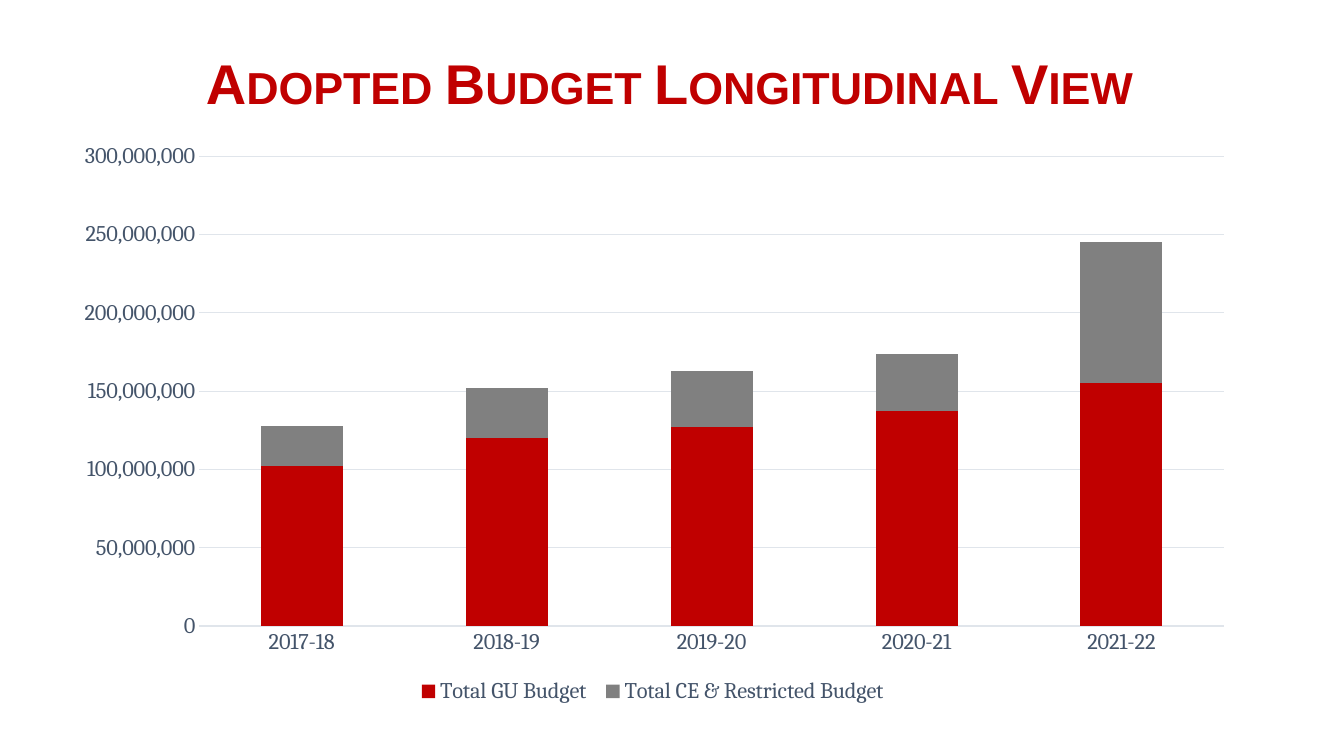
from lxml import etree
from pptx import Presentation
from pptx.chart.data import CategoryChartData
from pptx.dml.color import RGBColor
from pptx.enum.chart import XL_CHART_TYPE, XL_LEGEND_POSITION, XL_TICK_MARK
from pptx.enum.text import MSO_ANCHOR, MSO_AUTO_SIZE, PP_ALIGN
from pptx.oxml.ns import qn
from pptx.util import Pt

STACKED = XL_CHART_TYPE.COLUMN_STACKED
BOTTOM = XL_LEGEND_POSITION.BOTTOM
NO_TICK = XL_TICK_MARK.NONE
MIDDLE = MSO_ANCHOR.MIDDLE
NO_FIT = MSO_AUTO_SIZE.NONE
CENTER = PP_ALIGN.CENTER

COLORS = {"red": "C00000", "gray": "808080", "text": "44546A", "grid": "E0E5EB"}
YEARS = ["2017-18", "2018-19", "2019-20", "2020-21", "2021-22"]
BUDGETS = [  # name, colour, values in millions
    ("Total GU Budget ", "red", [102, 120, 127, 137, 155]),
    ("Total CE & Restricted Budget ", "gray", [26, 32, 36, 37, 90]),
]


def rgb(name):
    return RGBColor.from_string(COLORS[name])


def style_font(font, name, size, color):
    font.name, font.size = name, Pt(size)
    font.color.rgb = rgb(color)


def style_line(line, color):
    line.color.rgb = rgb(color)
    line.width = Pt(0.75)


def add_title(s, text, x, y, w, h):
    sp = s.shapes.title
    sp.left, sp.top, sp.width, sp.height = Pt(x), Pt(y), Pt(w), Pt(h)
    tf = sp.text_frame
    tf.word_wrap, tf.auto_size, tf.vertical_anchor = True, NO_FIT, MIDDLE
    p = tf.paragraphs[0]
    p.alignment, p.line_spacing = CENTER, 0.9
    r = p.add_run()
    r.text = text
    style_font(r.font, "Arial", 40, "red")
    r.font.bold = True
    r._r.get_or_add_rPr().set("cap", "small")


def set_plot_layout(chart, **fractions):
    """Fix the inner plot area as fractions of the chart box."""
    plot_area = chart._chartSpace.chart.plotArea
    layout = plot_area.find(qn("c:layout"))
    if layout is None:
        layout = etree.Element(qn("c:layout"))
        plot_area.insert(0, layout)
    manual = etree.SubElement(layout, qn("c:manualLayout"))
    settings = {"layoutTarget": "inner", "xMode": "edge", "yMode": "edge", **fractions}
    for tag, value in settings.items():
        etree.SubElement(manual, qn("c:" + tag)).set("val", str(value))


def add_budget_chart(s, x, y, w, h):
    data = CategoryChartData(number_format="#,##0")
    data.categories = YEARS
    for name, _, millions in BUDGETS:
        data.add_series(name, [m * 1_000_000 for m in millions])
    chart = s.shapes.add_chart(STACKED, Pt(x), Pt(y), Pt(w), Pt(h), data).chart
    style_font(chart.font, "Cambria", 16, "text")
    chart.has_title = False
    set_plot_layout(chart, x=0.116, y=0.042, w=0.863, h=0.815)

    # Columns
    plot = chart.plots[0]
    plot.gap_width, plot.overlap, plot.vary_by_categories = 150, 100, False
    for series, (_, color, _) in zip(plot.series, BUDGETS):
        series.format.fill.solid()
        series.format.fill.fore_color.rgb = rgb(color)

    # Axes and gridlines
    years, amounts = chart.category_axis, chart.value_axis
    for axis in (years, amounts):
        axis.major_tick_mark = axis.minor_tick_mark = NO_TICK
        style_font(axis.tick_labels.font, "Cambria", 16, "text")
    style_line(years.format.line, "grid")
    amounts.format.line.fill.background()
    amounts.minimum_scale, amounts.maximum_scale = 0, 300_000_000
    amounts.major_unit = 50_000_000
    amounts.tick_labels.number_format = "#,##0"
    amounts.tick_labels.number_format_is_linked = False
    style_line(amounts.major_gridlines.format.line, "grid")

    # Legend
    chart.has_legend = True
    chart.legend.position = BOTTOM
    chart.legend.include_in_layout = False
    style_font(chart.legend.font, "Cambria", 16, "text")


def main():
    prs = Presentation()
    prs.slide_width, prs.slide_height = Pt(960), Pt(540)
    s = prs.slides.add_slide(prs.slide_layouts[5])
    add_title(s, "Adopted Budget Longitudinal View", 86.4, 28.8, 783.4, 65.5)
    add_budget_chart(s, 43.9, 94.3, 848.2, 411.8)
    prs.save("out.pptx")


if __name__ == "__main__":
    main()
